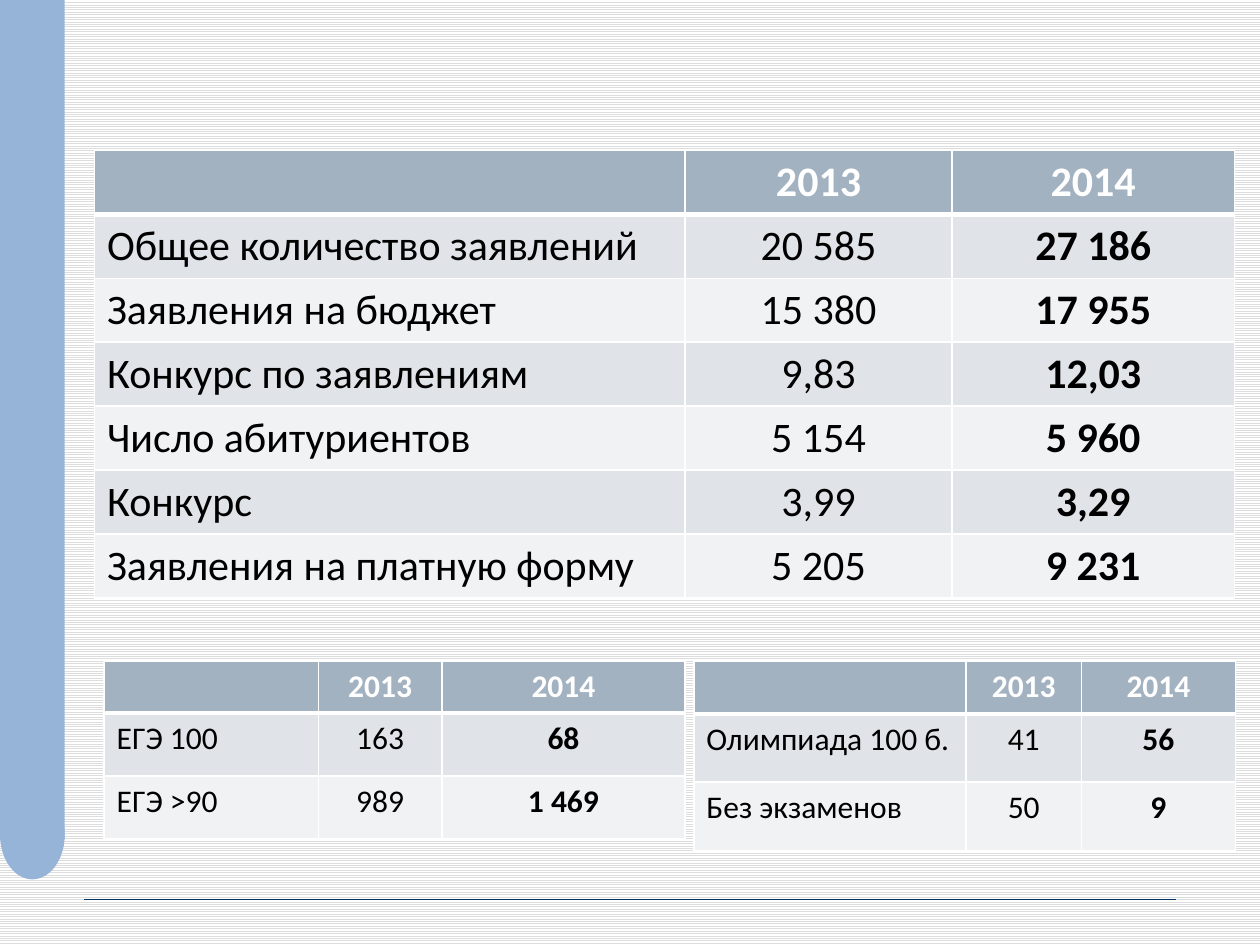
import dataclasses

import lxml.etree
import pptx
import pptx.dml.color
import pptx.enum.dml
import pptx.enum.shapes
import pptx.enum.text
import pptx.oxml.ns
import pptx.util

Pt = pptx.util.Pt
qn = pptx.oxml.ns.qn
Shape = pptx.enum.shapes.MSO_SHAPE
Align = pptx.enum.text.PP_ALIGN


def rgb(code):
    return pptx.dml.color.RGBColor.from_string(code)


@dataclasses.dataclass
class Theme:
    font: str = "Calibri"
    large: int = 24
    small: int = 18
    white: str = "FFFFFF"
    black: str = "000000"
    stripe: str = "DDDDDD"
    accent: str = "96B4D7"
    rule: str = "003366"
    head: str = "A3B2C1"
    bands: tuple = ("E0E4E9", "F0F2F4")
    thin: float = 1
    thick: float = 3


class Page:
    def __init__(self, slide, theme):
        self.slide = slide
        self.theme = theme

    def back(self):
        fill = self.slide.background.fill
        fill.patterned()
        fill.pattern = pptx.enum.dml.MSO_PATTERN.LIGHT_HORIZONTAL
        fill.fore_color.rgb = rgb(self.theme.stripe)
        fill.back_color.rgb = rgb(self.theme.white)

    def line(self, x1, y1, x2, y2, width):
        kind = pptx.enum.shapes.MSO_CONNECTOR.STRAIGHT
        line = self.slide.shapes.add_connector(kind, Pt(x1), Pt(y1), Pt(x2), Pt(y2))
        line.line.color.rgb = rgb(self.theme.rule)
        line.line.width = Pt(width)
        lxml.etree.SubElement(line._element.spPr, qn("a:effectLst"))

    def shape(self, kind, x, y, wide, high):
        shape = self.slide.shapes.add_shape(kind, Pt(x), Pt(y), Pt(wide), Pt(high))
        shape.shadow.inherit = False
        shape.fill.solid()
        shape.fill.fore_color.rgb = rgb(self.theme.accent)
        shape.line.fill.background()

    def border(self, cell, side, width):
        props = cell._tc.get_or_add_tcPr()
        edge = lxml.etree.SubElement(props, qn("a:ln" + side), w=str(Pt(width)))
        fill = lxml.etree.SubElement(edge, qn("a:solidFill"))
        lxml.etree.SubElement(fill, qn("a:srgbClr"), val=self.theme.white)

    def cell(self, cell, text, row, col, size):
        theme = self.theme
        # Borders come before the fill in the cell properties
        for side in "LRTB":
            under = (row, side) in ((0, "B"), (1, "T"))
            self.border(cell, side, theme.thick if under else theme.thin)
        cell.fill.solid()
        shade = theme.bands[(row - 1) % 2] if row else theme.head
        cell.fill.fore_color.rgb = rgb(shade)

        cell.text_frame.text = text
        para = cell.text_frame.paragraphs[0]
        para.alignment = Align.CENTER if col else Align.LEFT
        font = para.font
        for run in para.runs:
            font = run.font
        font.name = theme.font
        font.size = Pt(size)
        font.bold = row == 0 or col == 2
        font.color.rgb = rgb(theme.black if row else theme.white)

    def table(self, x, y, cols, highs, data, size):
        rows = [("", "2013", "2014")] + data
        frame = self.slide.shapes.add_table(
            len(rows), len(cols), Pt(x), Pt(y), Pt(sum(cols)), Pt(sum(highs)))
        table = frame.table
        for col, wide in zip(table.columns, cols):
            col.width = Pt(wide)
        for row, high in zip(table.rows, highs):
            row.height = Pt(high)
        for r, row in enumerate(rows):
            for c, text in enumerate(row):
                self.cell(table.cell(r, c), text, r, c, size)


def main():
    deck = pptx.Presentation()
    deck.slide_width, deck.slide_height = Pt(720), Pt(540)
    theme = Theme()
    page = Page(deck.slides.add_slide(deck.slide_layouts[6]), theme)

    # Background, footer rule and rounded side bar
    page.back()
    page.line(48, 514, 672, 514, 0.25)
    page.shape(Shape.RECTANGLE, 0, 0, 37, 479.5)
    page.shape(Shape.OVAL, 0, 451.5, 37, 51)

    # Applications
    totals = [
        ("Общее количество заявлений", "20 585", "27 186"),
        ("Заявления на бюджет", "15 380", "17 955"),
        ("Конкурс по заявлениям", "9,83", "12,03"),
        ("Число абитуриентов", "5 154", "5 960"),
        ("Конкурс", "3,99", "3,29"),
        ("Заявления на платную форму", "5 205", "9 231"),
    ]
    page.table(54, 86, (337.5, 152.5, 161.5), [36] * 7, totals, theme.large)

    # Exam scores
    exams = [("ЕГЭ 100", "163", "68"), ("ЕГЭ >90", "989", "1 469")]
    page.table(59.5, 378, (122.5, 70.5, 139), (29.5, 36, 36), exams, theme.small)

    # Admission by contest or without exams
    others = [("Олимпиада 100 б.", "41", "56"), ("Без экзаменов", "50", "9")]
    page.table(396.5, 378, (155.5, 66, 88), (30, 39, 39), others, theme.small)

    deck.save("out.pptx")


if __name__ == "__main__":
    main()
